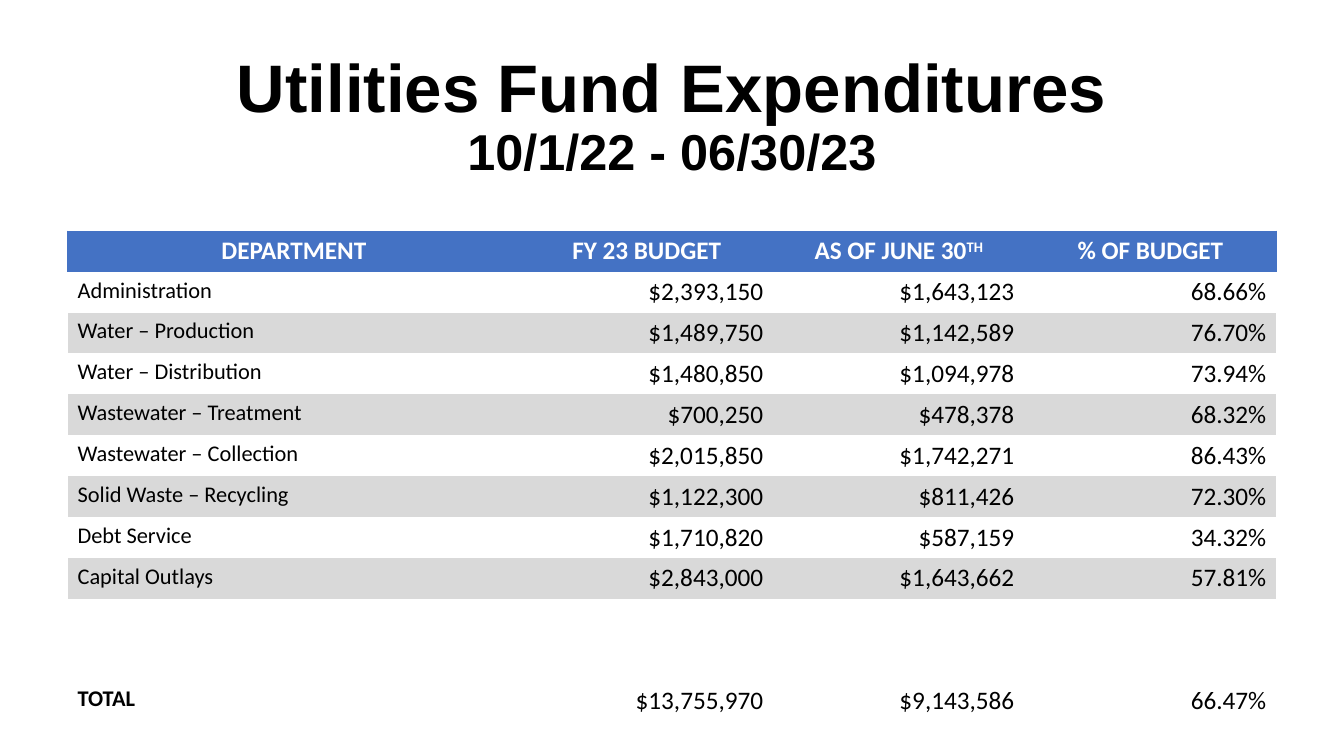
from lxml import etree
from pptx import Presentation
from pptx import util as u
from pptx.dml.color import RGBColor
from pptx.enum import text
from pptx.oxml import ns

BLACK = RGBColor(0x00, 0x00, 0x00)
WHITE = RGBColor(0xFF, 0xFF, 0xFF)
BLUE = RGBColor(0x44, 0x72, 0xC4)
GREY = RGBColor(0xD9, 0xD9, 0xD9)
NO_GRID_STYLE = "{2D5ABB26-0587-4C30-8999-92F81FD0307C}"

LEFT, WIDTH = 0.67, 11.99
COLUMN_WIDTHS = (4.49, 2.51, 2.49, 2.5)
ROW_HEIGHT = 4.87 / 12
HEADERS = ("DEPARTMENT", "FY 23 BUDGET", "AS OF JUNE 30", "% OF BUDGET")
DEPARTMENTS = (
    ("Administration", "$2,393,150", "$1,643,123", "68.66%"),
    ("Water – Production", "$1,489,750", "$1,142,589", "76.70%"),
    ("Water – Distribution", "$1,480,850", "$1,094,978", "73.94%"),
    ("Wastewater – Treatment", "$700,250", "$478,378", "68.32%"),
    ("Wastewater – Collection", "$2,015,850", "$1,742,271", "86.43%"),
    ("Solid Waste – Recycling", "$1,122,300", "$811,426", "72.30%"),
    ("Debt Service", "$1,710,820", "$587,159", "34.32%"),
    ("Capital Outlays", "$2,843,000", "$1,643,662", "57.81%"),
)
TOTAL = ("TOTAL", "$13,755,970", "$9,143,586", "66.47%")
SPACER_ROWS = 2


def place_title(sp, left, top, width, height):
    """Fill the title placeholder with the heading and its date range."""
    sp.left, sp.top, sp.width, sp.height = map(u.Inches, (left, top, width, height))
    tf = sp.text_frame
    tf.auto_size = text.MSO_AUTO_SIZE.NONE
    tf.vertical_anchor = text.MSO_ANCHOR.MIDDLE
    p = tf.paragraphs[0]
    p.alignment = text.PP_ALIGN.CENTER
    p.line_spacing = 0.9
    p.font.name, p.font.bold = "Arial", True
    p.font.color.rgb = BLACK
    heading = p.add_run()
    heading.text, heading.font.size = "Utilities Fund Expenditures", u.Pt(48)
    p.add_line_break()
    dates = p.add_run()
    dates.text, dates.font.size = "10/1/22 - 06/30/23", u.Pt(36)


def write_cell(cell, words, size, color, align, bold=False):
    """Write one formatted paragraph into a cell and return it."""
    p = cell.text_frame.paragraphs[0]
    p.alignment = align
    p.font.name, p.font.size, p.font.bold = "Calibri", u.Pt(size), bold
    p.font.color.rgb = color
    p.add_run().text = words
    return p


def add_border(cell, side, color):
    """Draw a half-point border on one side of a cell."""
    ln = etree.SubElement(cell._tc.get_or_add_tcPr(), ns.qn(f"a:ln{side}"), w=str(u.Pt(0.5)))
    fill = etree.SubElement(ln, ns.qn("a:solidFill"))
    etree.SubElement(fill, ns.qn("a:srgbClr"), val=str(color))


def fill_cell(cell, color):
    """Give a cell a solid fill, or none."""
    if color is None:
        cell.fill.background()
    else:
        cell.fill.solid()
        cell.fill.fore_color.rgb = color


def write_header(cells):
    """Write the blue header row."""
    for c, (cell, words) in enumerate(zip(cells, HEADERS)):
        p = write_cell(cell, words, 18, WHITE, text.PP_ALIGN.CENTER, True)
        if words == "AS OF JUNE 30":
            r = p.add_run()
            r.text = "TH"
            r.font._rPr.set("baseline", "30000")
        if c == 0:
            add_border(cell, "L", BLUE)
        if c == len(HEADERS) - 1:
            add_border(cell, "R", BLUE)
        add_border(cell, "T", BLUE)
        fill_cell(cell, BLUE)


def write_row(cells, values, color=None, bold_label=False):
    """Write a label and its right-aligned figures."""
    for c, (cell, words) in enumerate(zip(cells, values)):
        if c == 0:
            write_cell(cell, words, 16, BLACK, text.PP_ALIGN.LEFT, bold_label)
        else:
            write_cell(cell, words, 18, BLACK, text.PP_ALIGN.RIGHT)
        fill_cell(cell, color)


def add_budget_table(slide, left, top, width):
    """Add the expenditure table with banded departments and a total."""
    count = len(DEPARTMENTS) + SPACER_ROWS + 2
    frame = slide.shapes.add_table(
        count, len(HEADERS), u.Inches(left), u.Inches(top),
        u.Inches(width), u.Inches(count * ROW_HEIGHT))
    table = frame.table
    table.horz_banding = False
    table._tbl.tblPr.find(ns.qn("a:tableStyleId")).text = NO_GRID_STYLE
    for column, column_width in zip(table.columns, COLUMN_WIDTHS):
        column.width = u.Inches(column_width)
    rows = [row.cells for row in table.rows]
    write_header(rows[0])
    for i, values in enumerate(DEPARTMENTS):
        write_row(rows[i + 1], values, GREY if i % 2 else None)
    for cells in rows[-1 - SPACER_ROWS:-1]:
        for cell in cells:
            fill_cell(cell, None)
    write_row(rows[-1], TOTAL, bold_label=True)


def main():
    """Build and save the slide."""
    prs = Presentation()
    prs.slide_width, prs.slide_height = u.Inches(13.33), u.Inches(7.5)
    slide = prs.slides.add_slide(prs.slide_layouts[5])
    place_title(slide.shapes.title, LEFT, 0.26, WIDTH, 1.82)
    add_budget_table(slide, LEFT, 2.29, WIDTH)
    prs.save("out.pptx")


if __name__ == "__main__":
    main()
